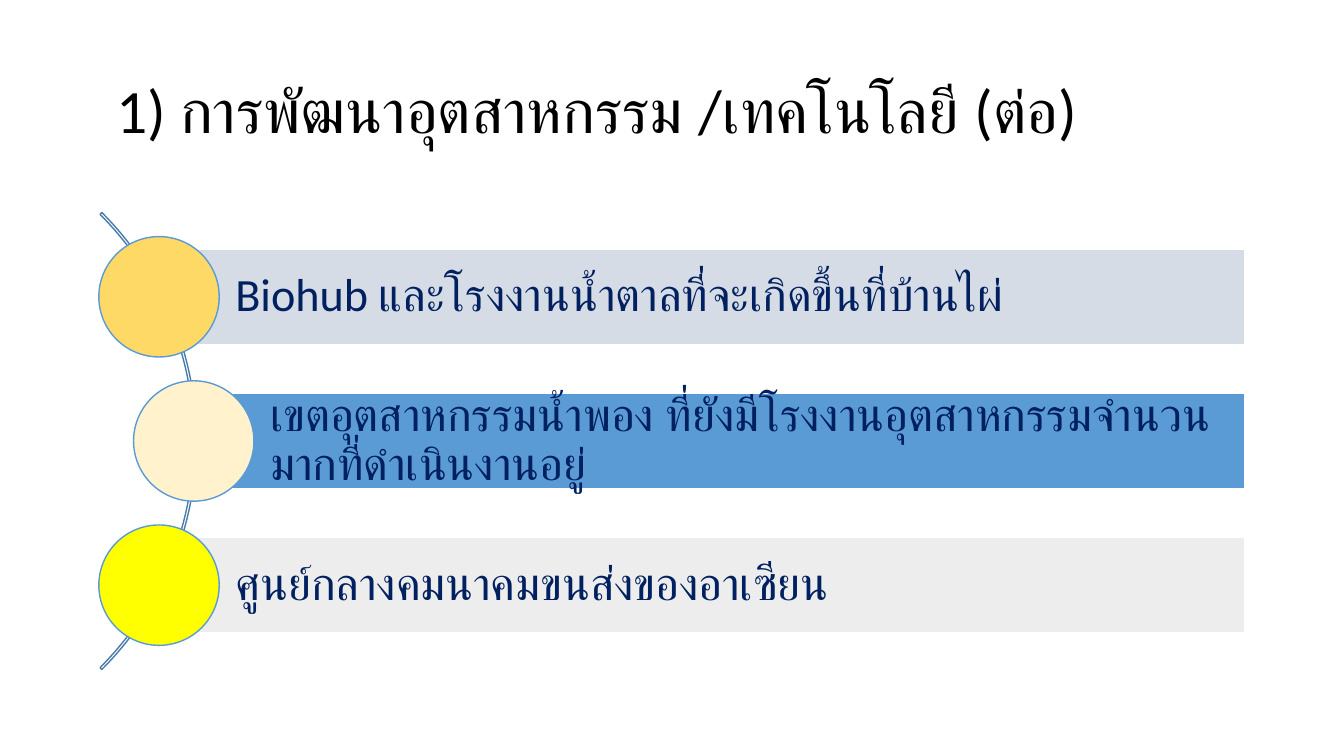
from pptx import Presentation
from pptx.dml.color import RGBColor
from pptx.enum.lang import MSO_LANGUAGE_ID
from pptx.enum.shapes import MSO_SHAPE
from pptx.enum.text import MSO_ANCHOR, PP_ALIGN
from pptx.util import Pt

TITLE = " 1) การพัฒนาอุตสาหกรรม /เทคโนโลยี (ต่อ)"
ROWS = [
    ("Biohub และโรงงานน้ำตาลที่จะเกิดขึ้นที่บ้านไผ่", "D6DCE5", "FFD966", 113.6),
    ("เขตอุตสาหกรรมน้ำพอง ที่ยังมีโรงงานอุตสาหกรรมจำนวนมากที่ดำเนินงานอยู่",
     "5B9BD5", "FFF2CC", 138.4),
    ("ศูนย์กลางคมนาคมขนส่งของอาเซียน", "EDEDED", "FFFF00", 113.6),
]
MIDDLE_Y = 315
ROW_PITCH = 103
BAR_RIGHT = 889.2
BAR_HEIGHT = 68
CIRCLE_SIZE = 86
ARC_SIZE = 461.5
ARC_CENTER_X = -90.4


def color(value):
    return RGBColor.from_string(value)


def set_format(target, values):
    for name, value in values.items():
        setattr(target, name, value)


def write_text(box, text, size, text_color, insets):
    set_format(box.text_frame, {
        "word_wrap": True,
        "vertical_anchor": MSO_ANCHOR.MIDDLE,
        **insets,
    })
    para = box.text_frame.paragraphs[0]
    set_format(para, {"alignment": PP_ALIGN.LEFT, "line_spacing": 0.9})
    span = para.add_run()
    span.text = text
    set_format(span.font, {
        "name": "Calibri",
        "size": Pt(size),
        "language_id": MSO_LANGUAGE_ID.THAI,
    })
    span.font.color.rgb = color(text_color)


def add_figure(page, kind, left, top, width, height, line, fill=None):
    figure = page.shapes.add_shape(kind, Pt(left), Pt(top), Pt(width), Pt(height))
    figure.shadow.inherit = False
    if fill:
        figure.fill.solid()
        figure.fill.fore_color.rgb = color(fill)
    else:
        figure.fill.background()
    figure.line.color.rgb = color(line)
    figure.line.width = Pt(1)
    return figure


def add_title(page):
    box = page.shapes.add_textbox(Pt(66), Pt(28.8), Pt(828), Pt(104.4))
    write_text(box, TITLE, 44, "000000", {})


def add_arc(page):
    half = ARC_SIZE / 2
    arc = add_figure(page, MSO_SHAPE.BLOCK_ARC, ARC_CENTER_X - half, MIDDLE_Y - half,
                     ARC_SIZE, ARC_SIZE, "497CAB")
    for index, value in enumerate((189, 27, 0.004)):
        arc.adjustments[index] = value


def add_row(page, center_y, text, bar_fill, circle_fill, center_x):
    bar = add_figure(page, MSO_SHAPE.RECTANGLE, center_x, center_y - BAR_HEIGHT / 2,
                     BAR_RIGHT - center_x, BAR_HEIGHT, "FFFFFF", bar_fill)
    write_text(bar, text, 33, "002060", {
        "margin_left": Pt(54.5),
        "margin_top": Pt(6.6),
        "margin_right": Pt(6.6),
        "margin_bottom": Pt(6.6),
    })
    half = CIRCLE_SIZE / 2
    add_figure(page, MSO_SHAPE.OVAL, center_x - half, center_y - half,
               CIRCLE_SIZE, CIRCLE_SIZE, "5B9BD5", circle_fill)


def main():
    deck = Presentation()
    set_format(deck, {"slide_width": Pt(960), "slide_height": Pt(540)})
    page = deck.slides.add_slide(deck.slide_layouts[6])
    add_title(page)
    add_arc(page)
    for index, row in enumerate(ROWS):
        add_row(page, MIDDLE_Y + (index - 1) * ROW_PITCH, *row)
    deck.save("out.pptx")


if __name__ == "__main__":
    main()
